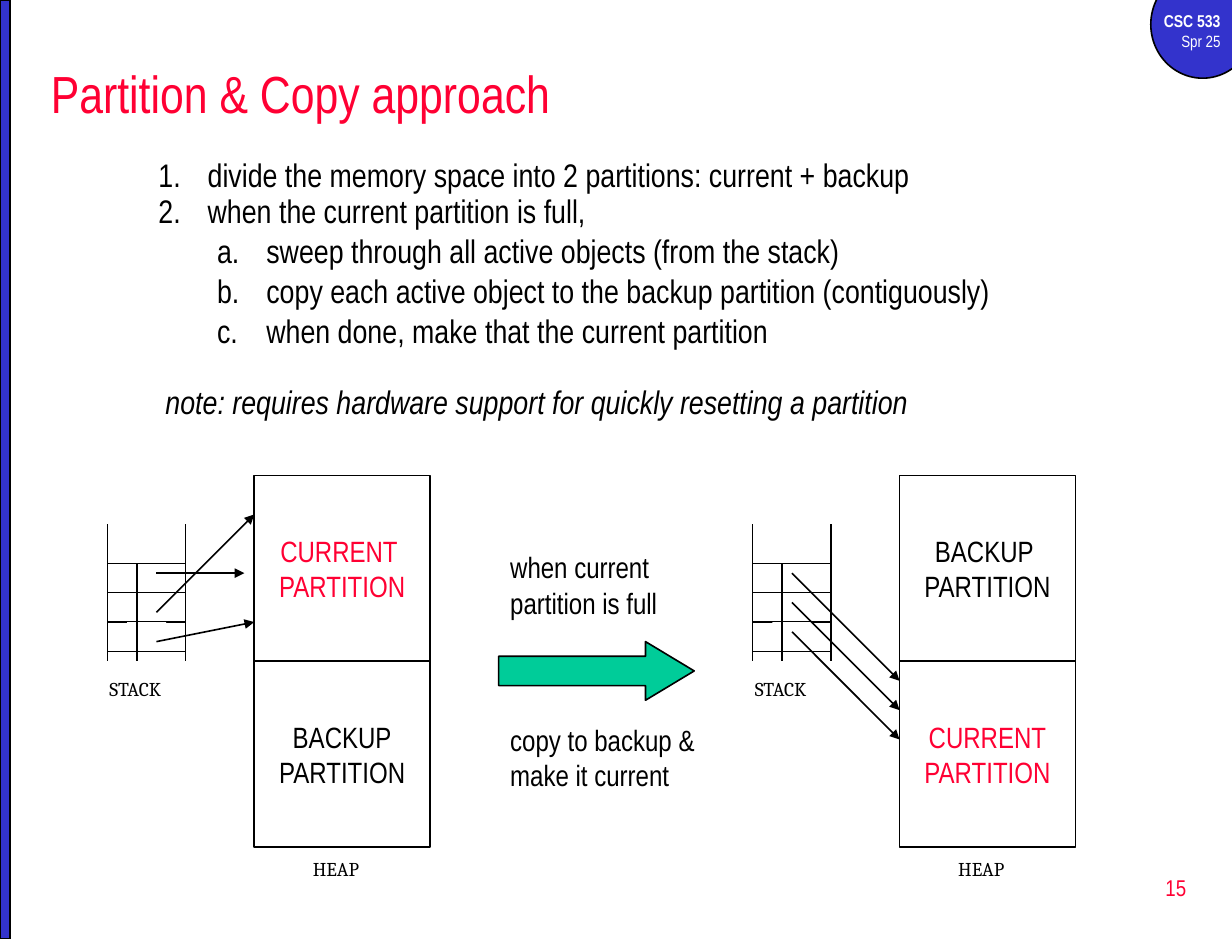
from lxml.etree import SubElement
from pptx import Presentation
from pptx.dml.color import RGBColor
from pptx.enum.shapes import MSO_CONNECTOR as Connector, MSO_SHAPE as Shape
from pptx.enum.text import MSO_ANCHOR as Anchor, MSO_AUTO_SIZE as AutoSize, PP_ALIGN as Align
from pptx.oxml.ns import qn
from pptx.util import Inches, Pt

COLUMNS, ROWS = 126, 96
BLACK, WHITE, RED, BLUE, GREEN = "000000", "FFFFFF", "FF0033", "3333CC", "00CC99"
NARROW, SERIF = "Arial Narrow", "Cambria"
HEAP_TOP, HEAP_LEFT, PARTITION_ROWS = 48.6, 26, 19
STACK_TOP, STACK_BOTTOM, SLOT_TOP, SLOT_ROWS = 53.6, 67.6, 57.6, 3

STEPS = [
    ("divide the memory space into 2 partitions: current + backup", 1),
    ("when the current partition is full,", 1),
    ("sweep through all active objects (from the stack)", 2),
    ("copy each active object to the backup partition (contiguously)", 2),
    ("when done, make that the current partition", 2),
]
NOTE = "note: requires hardware support for quickly resetting a partition"


def cells(*counts):
    """Turn counts of grid cells, twelve to the inch, into lengths."""
    return [Inches(count / 12) for count in counts]


def color(hex_value):
    """Turn a hex string into a colour."""
    return RGBColor.from_string(hex_value)


def style(paragraph, size, ink, face=NARROW, bold=False, italic=False):
    """Format every run of a paragraph."""
    for run in paragraph.runs:
        run.font.size, run.font.name = Pt(size), face
        run.font.bold, run.font.italic = bold, italic
        run.font.color.rgb = color(ink)


def place(placeholder, left, top, width, height):
    """Move a placeholder to a grid area and keep its text size fixed."""
    placeholder.left, placeholder.top, placeholder.width, placeholder.height = cells(
        left, top, width, height)
    placeholder.text_frame.auto_size = AutoSize.NONE


def add_label(shapes, area, text, size, ink, face=NARROW, align=Align.LEFT,
              wrap=True, margin=None):
    """Add a text box with one style."""
    label = shapes.add_textbox(*cells(*area))
    frame = label.text_frame
    frame.word_wrap = wrap
    if margin is not None:
        frame.margin_left = frame.margin_right = margin
        frame.margin_top = frame.margin_bottom = margin
    frame.text = text
    for paragraph in frame.paragraphs:
        paragraph.alignment = align
        style(paragraph, size, ink, face)
    return label


def add_block(shapes, kind, area, fill=None, outlined=True):
    """Add a preset shape with a plain fill and a thin outline."""
    block = shapes.add_shape(kind, *cells(*area))
    block.shadow.inherit = False
    if fill:
        block.fill.solid()
        block.fill.fore_color.rgb = color(fill)
    else:
        block.fill.background()
    if outlined:
        block.line.color.rgb = color(BLACK)
        block.line.width = Pt(1)
    else:
        block.line.fill.background()
    return block


def add_line(shapes, start, end, width=0.75, arrow=False):
    """Add a straight line, with an arrowhead at its end if asked."""
    line = shapes.add_connector(Connector.STRAIGHT, *cells(*start, *end))
    line.line.color.rgb = color(BLACK)
    line.line.width = Pt(width)
    if arrow:
        SubElement(line.line._get_or_add_ln(), qn("a:tailEnd"), type="triangle")
    SubElement(line._element.spPr, qn("a:effectLst"))


def add_partition(shapes, left, top, text, ink):
    """Add one half of the heap with its centred name."""
    partition = add_block(shapes, Shape.RECTANGLE, (left, top, 18, PARTITION_ROWS))
    frame = partition.text_frame
    frame.word_wrap, frame.vertical_anchor = False, Anchor.MIDDLE
    frame.text = text
    for paragraph in frame.paragraphs:
        paragraph.alignment = Align.CENTER
        style(paragraph, 18, ink)


def add_memory(slide, offset, partitions, pointers):
    """Add a stack, its heap and the pointers between them."""
    shapes = slide.shapes.add_group_shape().shapes
    add_label(shapes, (offset + 32, 87.6, 5.4, 2.4), "HEAP", 12, BLACK, SERIF,
              wrap=False, margin=0)
    for index, (text, ink) in enumerate(partitions):
        add_partition(shapes, offset + HEAP_LEFT, HEAP_TOP + index * PARTITION_ROWS, text, ink)
    add_label(shapes, (offset + 11.2, 69.2, 6.7, 2.4), "STACK", 12, BLACK, SERIF,
              wrap=False, margin=0)
    left, right = offset + 11, offset + 19
    for side in (left, right):
        add_line(shapes, (side, STACK_TOP), (side, STACK_BOTTOM))
    for slot in range(4):
        row = SLOT_TOP + slot * SLOT_ROWS
        add_line(shapes, (left, row), (right, row))
    add_block(shapes, Shape.RECTANGLE, (offset + 13, 63.6, 4, 2), WHITE, outlined=False)
    for (start, start_row), (end, end_row) in pointers:
        add_line(shapes, (offset + start, start_row), (offset + end, end_row), 1, arrow=True)
    add_line(shapes, (offset + 14, SLOT_TOP), (offset + 14, STACK_BOTTOM), 1)


def add_transition(slide):
    """Add the arrow between the two memory states with its captions."""
    shapes = slide.shapes.add_group_shape().shapes
    arrow = add_block(shapes, Shape.RIGHT_ARROW, (51, 65.6, 20, 6), GREEN)
    arrow.adjustments[0], arrow.adjustments[1] = 0.5, 0.83
    add_label(shapes, (51, 55.6, 19, 8.4), "when current partition is full", 18, BLACK)
    add_label(shapes, (51, 73.2, 22, 8.4), "copy to backup & make it current", 18, BLACK)


def add_frame(slide):
    """Add the course badge, the side bar and the page number."""
    add_block(slide.shapes, Shape.OVAL, (117.7, -3, 10.6, 11), BLUE)
    course = add_label(slide.shapes, (116, 0.5, 10, 5.5), "CSC 533\nSpr 25", 10, WHITE,
                       align=Align.RIGHT)
    style(course.text_frame.paragraphs[0], 10.5, WHITE, bold=True)
    add_block(slide.shapes, Shape.RECTANGLE, (0, 0, 1, ROWS), BLUE)
    number = add_label(slide.shapes, (96.2, 87.5, 26.3, 6.4), "15", 14, RED, align=Align.RIGHT)
    number.text_frame.vertical_anchor = Anchor.MIDDLE


def fill_title(title):
    """Write the slide title."""
    place(title, 4, 5, 119, 9)
    title.text_frame.text = "Partition & Copy approach"
    title.text_frame.vertical_anchor = Anchor.MIDDLE
    heading = title.text_frame.paragraphs[0]
    heading.alignment = Align.LEFT
    style(heading, 32, RED)


def fill_steps(body):
    """Write the numbered steps and the closing note."""
    place(body, 9, 16, 114.2, 24)
    frame = body.text_frame
    frame.text = "\n".join([text for text, _ in STEPS] + [NOTE])
    *steps, note = frame.paragraphs
    for step, (_, level) in zip(steps, STEPS):
        step.level = level
        step.line_spacing, step.space_before = 0.7 + level / 10, Pt(3)
        style(step, 20, BLACK)
        properties = step._p.get_or_add_pPr()
        properties.set("marL", str(Inches(0.42 + level / 2)))
        properties.set("indent", str(Inches(-0.42)))
        scheme = "arabicPeriod" if level == 1 else "alphaLcPeriod"
        SubElement(properties, qn("a:buAutoNum"), type=scheme)
    note.level, note.line_spacing, note.space_before = 1, 0.9, Pt(22)
    style(note, 20, BLACK, italic=True)
    properties = note._p.get_or_add_pPr()
    properties.set("marL", str(Inches(0.56)))
    properties.set("indent", "0")
    SubElement(properties, qn("a:buNone"))


def main():
    """Build the slide and save it."""
    deck = Presentation()
    deck.slide_width, deck.slide_height = cells(COLUMNS, ROWS)
    slide = deck.slides.add_slide(deck.slide_layouts[1])
    add_frame(slide)
    fill_title(slide.shapes.title)
    fill_steps(slide.placeholders[1])
    add_memory(slide, 0,
               [("CURRENT \nPARTITION", RED), ("BACKUP\nPARTITION", BLACK)],
               [((16, 65.6), (26, 63.6)), ((16, 62.6), (26, 52.6)), ((16, 58.6), (25, 58.6))])
    add_memory(slide, 66,
               [("BACKUP \nPARTITION", BLACK), ("CURRENT\nPARTITION", RED)],
               [((15, row), (26, row + 11)) for row in (58.6, 61.6, 64.6)])
    add_transition(slide)
    deck.save("out.pptx")


if __name__ == "__main__":
    main()
